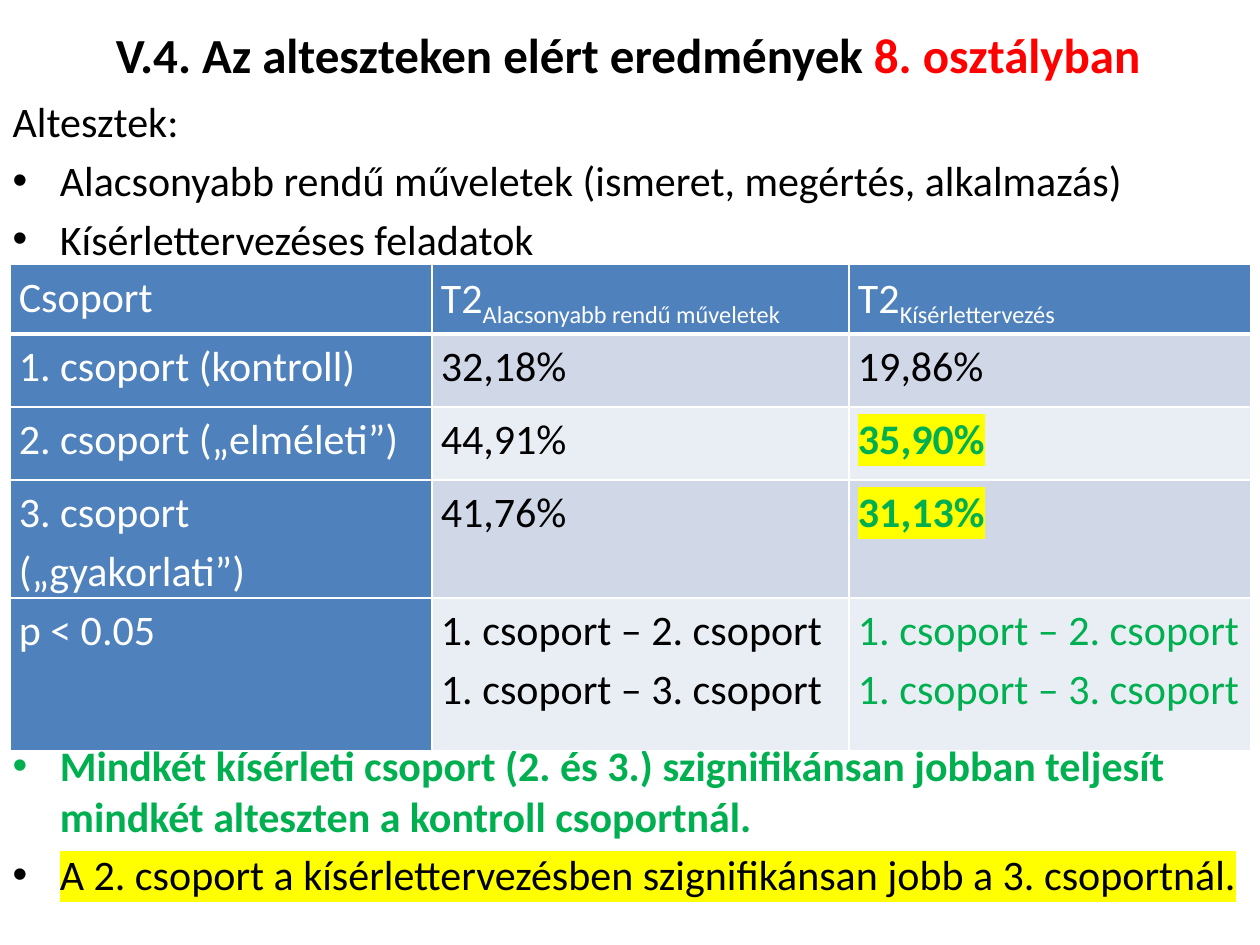
from dataclasses import dataclass

from lxml import etree
from pptx import Presentation
from pptx.dml.color import RGBColor
from pptx.enum.text import MSO_ANCHOR, MSO_AUTO_SIZE
from pptx.oxml.ns import qn
from pptx.util import Inches, Pt

MIDDLE = MSO_ANCHOR.MIDDLE
NO_AUTOFIT = MSO_AUTO_SIZE.NONE


@dataclass(frozen=True)
class Theme:
    font: str = "Calibri"
    title_size: int = 28
    text_size: int = 24
    black: str = "000000"
    white: str = "FFFFFF"
    red: str = "FF0000"
    green: str = "00B050"
    yellow: str = "FFFF00"
    header: str = "4F81BD"
    bands: tuple[str, str] = ("D0D8E8", "E9EDF4")
    border_width: int = 1
    header_border_width: int = 3


THEME = Theme()


@dataclass(frozen=True)
class Span:
    text: str
    color: str = THEME.black
    bold: bool = False
    highlighted: bool = False
    subscript: bool = False
    size: int = THEME.text_size


@dataclass(frozen=True)
class BodyLine:
    span: Span
    bulleted: bool = True
    space_before: int | None = None


Cell = list[list[Span]]  # paragraphs, each a list of spans

TABLE_GAP = 272  # points left free in the body for the table
TITLE = [
    Span("V.4. Az alteszteken elért eredmények ", bold=True, size=THEME.title_size),
    Span("8. osztályban", THEME.red, bold=True, size=THEME.title_size),
]
BODY = [
    BodyLine(Span("Altesztek:"), bulleted=False),
    BodyLine(Span("Alacsonyabb rendű műveletek (ismeret, megértés, alkalmazás)")),
    BodyLine(Span("Kísérlettervezéses feladatok")),
    BodyLine(
        Span("Mindkét kísérleti csoport (2. és 3.) szignifikánsan jobban teljesít "
             "mindkét alteszten a kontroll csoportnál.", THEME.green, bold=True),
        space_before=TABLE_GAP,
    ),
    BodyLine(Span("A 2. csoport a kísérlettervezésben szignifikánsan jobb a 3. csoportnál.",
                  highlighted=True)),
]
COLUMN_WIDTHS = [3.35, 3.31, 3.19]
ROW_HEIGHTS = [0.55, 0.58, 0.58, 0.58, 1.21]
COMPARISONS = ["1. csoport – 2. csoport", "1. csoport – 3. csoport"]


def label(text: str) -> Cell:
    return [[Span(text, THEME.white)]]


def test_heading(subtest: str) -> Cell:
    return [[Span("T2", THEME.white), Span(subtest, THEME.white, subscript=True)]]


def value(text: str, significant: bool = False) -> Cell:
    color = THEME.green if significant else THEME.black
    return [[Span(text, color, bold=significant, highlighted=significant)]]


def comparisons(color: str) -> Cell:
    return [[Span(text, color)] for text in COMPARISONS]


ROWS: list[list[Cell]] = [
    [label("Csoport"), test_heading("Alacsonyabb rendű műveletek"),
     test_heading("Kísérlettervezés")],
    [label("1. csoport (kontroll)"), value("32,18%"), value("19,86%")],
    [label("2. csoport („elméleti”)"), value("44,91%"), value("35,90%", True)],
    [label("3. csoport („gyakorlati”)"), value("41,76%"), value("31,13%", True)],
    [label("p < 0.05"), comparisons(THEME.black), comparisons(THEME.green)],
]


def place(shape, left: float, top: float, width: float, height: float) -> None:
    shape.left, shape.top = Inches(left), Inches(top)
    shape.width, shape.height = Inches(width), Inches(height)


def add_span(paragraph, span: Span) -> None:
    run = paragraph.add_run()
    run.text = span.text
    font = run.font
    font.name = THEME.font
    font.size = Pt(span.size)
    font.bold = span.bold
    font.color.rgb = RGBColor.from_string(span.color)
    properties = run._r.get_or_add_rPr()
    if span.subscript:
        properties.set("baseline", "-25000")
    if span.highlighted:
        highlight = etree.Element(qn("a:highlight"))
        etree.SubElement(highlight, qn("a:srgbClr"), val=THEME.yellow)
        properties.find(qn("a:solidFill")).addnext(highlight)


def next_paragraph(text_frame, index: int):
    return text_frame.add_paragraph() if index else text_frame.paragraphs[0]


def remove_bullet(paragraph) -> None:
    properties = paragraph._p.get_or_add_pPr()
    properties.set("marL", "0")
    properties.set("indent", "0")
    etree.SubElement(properties, qn("a:buNone"))


def fill_title(shape) -> None:
    place(shape, 0.08, -0.05, 9.81, 0.96)
    shape.text_frame.auto_size = NO_AUTOFIT
    shape.text_frame.vertical_anchor = MIDDLE
    for span in TITLE:
        add_span(shape.text_frame.paragraphs[0], span)


def fill_body(shape) -> None:
    place(shape, 0, 0.71, 10, 6.79)
    shape.text_frame.auto_size = NO_AUTOFIT
    for index, line in enumerate(BODY):
        paragraph = next_paragraph(shape.text_frame, index)
        if line.space_before is not None:
            paragraph.space_before = Pt(line.space_before)
        if not line.bulleted:
            remove_bullet(paragraph)
        add_span(paragraph, line.span)


def set_borders(cell, bottom_width: int) -> None:
    """Add white edges; they must precede the fill in the cell properties."""
    properties = cell._tc.get_or_add_tcPr()
    for position, edge in enumerate(("lnL", "lnR", "lnT", "lnB")):
        width = bottom_width if edge == "lnB" else THEME.border_width
        line = etree.Element(qn(f"a:{edge}"), w=str(Pt(width)))
        fill = etree.SubElement(line, qn("a:solidFill"))
        etree.SubElement(fill, qn("a:srgbClr"), val=THEME.white)
        properties.insert(position, line)


def fill_cell(cell, content: Cell, color: str, bottom_width: int) -> None:
    cell.margin_left = cell.margin_right = Inches(0.07)
    cell.margin_top = cell.margin_bottom = 0
    cell.fill.solid()
    cell.fill.fore_color.rgb = RGBColor.from_string(color)
    set_borders(cell, bottom_width)
    for index, spans in enumerate(content):
        paragraph = next_paragraph(cell.text_frame, index)
        paragraph.line_spacing = 1.15
        for span in spans:
            add_span(paragraph, span)


def add_results_table(slide) -> None:
    table = slide.shapes.add_table(
        len(ROWS), len(COLUMN_WIDTHS), Inches(0.08), Inches(2.1),
        Inches(sum(COLUMN_WIDTHS)), Inches(sum(ROW_HEIGHTS))).table
    table.first_row = table.horz_banding = False
    for column, width in zip(table.columns, COLUMN_WIDTHS):
        column.width = Inches(width)
    for row_index, (contents, height) in enumerate(zip(ROWS, ROW_HEIGHTS)):
        table.rows[row_index].height = Inches(height)
        bottom_width = THEME.border_width if row_index else THEME.header_border_width
        for column_index, content in enumerate(contents):
            is_header = row_index == 0 or column_index == 0
            color = THEME.header if is_header else THEME.bands[(row_index - 1) % 2]
            fill_cell(table.cell(row_index, column_index), content, color, bottom_width)


def main() -> None:
    presentation = Presentation()
    presentation.slide_width, presentation.slide_height = Inches(10), Inches(7.5)
    slide = presentation.slides.add_slide(presentation.slide_layouts[1])
    fill_title(slide.shapes.title)
    fill_body(slide.placeholders[1])
    add_results_table(slide)
    presentation.save("out.pptx")


if __name__ == "__main__":
    main()
